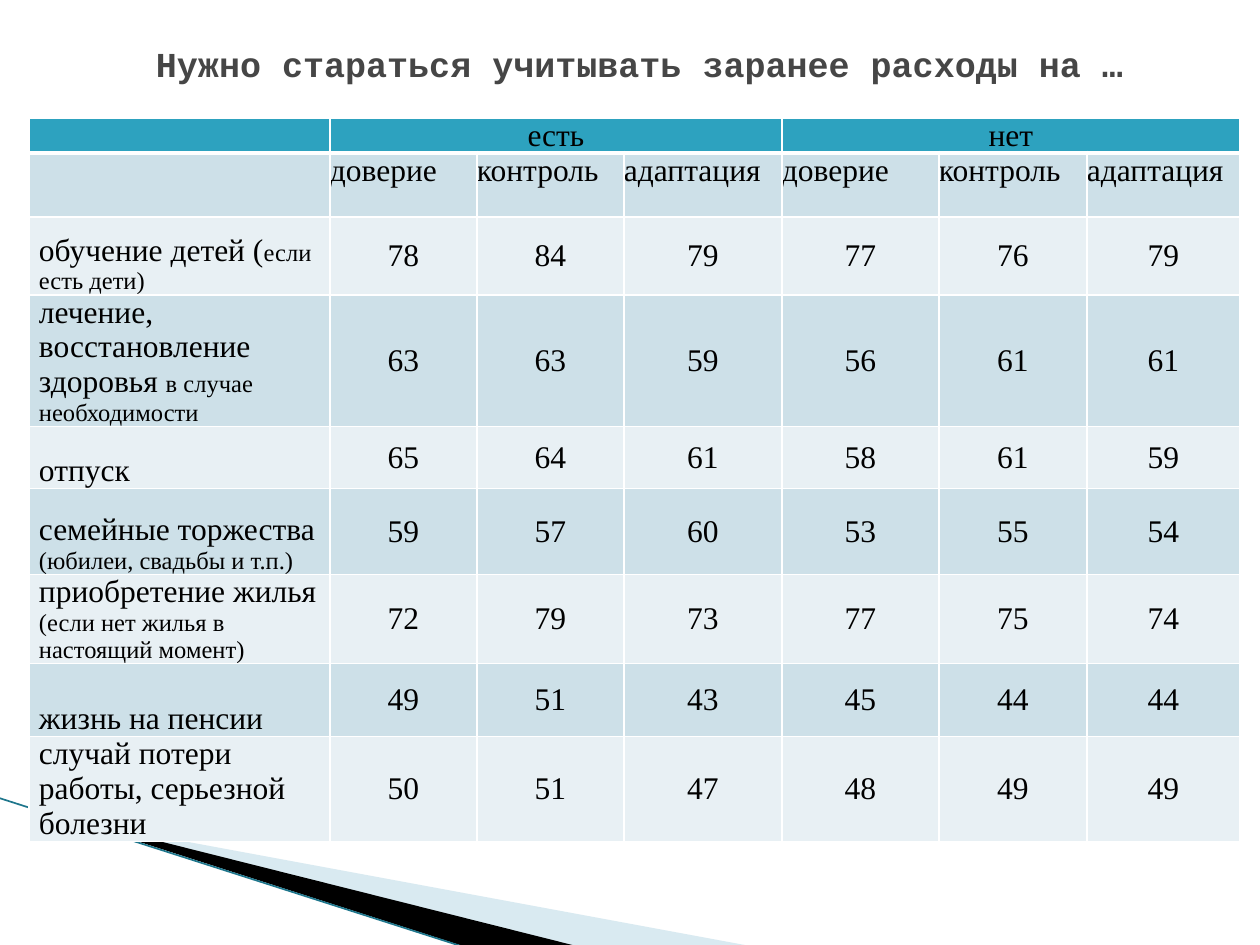
from lxml.etree import SubElement
from pptx import Presentation
from pptx.dml.color import RGBColor as Rgb
from pptx.enum.shapes import MSO_CONNECTOR as Connector
from pptx.enum.text import MSO_ANCHOR as Anchor, PP_ALIGN as Align
from pptx.oxml.ns import qn
from pptx.util import Pt

PX = 914400 / 126
COLORS = {
    "title": "464646", "text": "000000", "border": "FFFFFF", "header": "2DA2BF",
    "dark_band": "CDE0E8", "light_band": "E8F0F4",
    "pale_wedge": "A0CBDC", "black_wedge": "000000", "edge": "1E768C",
}
SERIF, MONO = "Times New Roman", "Courier New"
COLUMNS = [301, 147, 147, 158, 157, 148, 153]
ROWS = [34, 64, 78, 94, 62, 86, 86, 73, 86]
ANSWERS = ["есть", "нет"]
FACTORS = ["доверие", "контроль", "адаптация"]
EXPENSES = [
    ("обучение детей (", "если есть дети)", [78, 84, 79, 77, 76, 79]),
    ("лечение, восстановление здоровья ", "в случае необходимости",
     [63, 63, 59, 56, 61, 61]),
    ("отпуск", "", [65, 64, 61, 58, 61, 59]),
    ("семейные торжества ", "(юбилеи, свадьбы и т.п.)", [59, 57, 60, 53, 55, 54]),
    ("приобретение жилья ", "(если нет жилья в настоящий момент)",
     [72, 79, 73, 77, 75, 74]),
    ("жизнь на пенсии", "", [49, 51, 43, 45, 44, 44]),
    ("случай потери работы, серьезной болезни", "", [50, 51, 47, 48, 49, 49]),
]


def px(length):
    """Turn px into EMU."""
    return round(length * PX)


def color(name):
    """Look up a named colour."""
    return Rgb.from_string(COLORS[name])


def add_run(paragraph, words, size, font, color_name, bold=False):
    """Append one formatted run."""
    run = paragraph.add_run()
    run.text = words
    run.font.size, run.font.name, run.font.bold = Pt(size), font, bold
    run.font.color.rgb = color(color_name)


def reframe(wedge, left, top, width, height):
    """Give a wedge a new frame while its outline stays in place."""
    shift_x, shift_y = wedge.left - left, wedge.top - top
    outline = wedge._element.spPr.find(".//" + qn("a:path"))
    outline.set("w", str(width))
    outline.set("h", str(height))
    for corner in outline.iter(qn("a:pt")):
        corner.set("x", str(int(corner.get("x")) + shift_x))
        corner.set("y", str(int(corner.get("y")) + shift_y))
    wedge.left, wedge.top, wedge.width, wedge.height = left, top, width, height


def add_wedge(slide, left, top, corners, frame, color_name, opacity=100):
    """Draw a filled wedge; corners and frame are relative to its origin."""
    points = [(px(left + x), px(top + y)) for x, y in corners]
    builder = slide.shapes.build_freeform(*points[0])
    builder.add_line_segments(points[1:], close=True)
    wedge = builder.convert_to_shape()
    x, y, width, height = frame
    reframe(wedge, px(left + x), px(top + y), px(width), px(height))
    wedge.shadow.inherit = False
    wedge.fill.solid()
    wedge.fill.fore_color.rgb = color(color_name)
    wedge.line.fill.background()
    if opacity < 100:
        tint = wedge.fill._xPr.find(".//" + qn("a:srgbClr"))
        SubElement(tint, qn("a:alpha"), val=str(opacity * 1000))


def add_swoosh(slide, left, top):
    """Draw the corner decoration from its upper left point."""
    add_wedge(slide, left, top, [(70, 22), (751, 148), (576, 148), (70, 21)],
              (99, -109, 524, 199), "pale_wedge", 40)
    add_wedge(slide, left, top, [(68, 20), (577, 148), (470, 150), (69, 21)],
              (-7, 0, 524, 116), "black_wedge")
    edge = slide.shapes.add_connector(
        Connector.STRAIGHT, px(left), px(top), px(left + 468), px(top + 150))
    edge.line.color.rgb = color("edge")
    edge.line.width = Pt(0.95)
    SubElement(edge._element.spPr, qn("a:effectLst"))


def place_title(slide, left, top, width, height):
    """Put the heading in the title placeholder."""
    title = slide.shapes.title
    title.left, title.top = px(left), px(top)
    title.width, title.height = px(width), px(height)
    frame = title.text_frame
    frame.word_wrap, frame.vertical_anchor = True, Anchor.MIDDLE
    heading = frame.paragraphs[0]
    heading.alignment = Align.CENTER
    add_run(heading, "Нужно стараться учитывать заранее расходы на …",
            20, MONO, "title", True)


def style_cell(cell, band, side_inset=0, bottom_width=1):
    """Set the borders, fill and insets of a cell."""
    properties = cell._tc.get_or_add_tcPr()
    for side, width in zip("LRTB", (1, 1, 1, bottom_width)):
        border = SubElement(properties, qn(f"a:ln{side}"), w=str(Pt(width)))
        paint = SubElement(border, qn("a:solidFill"))
        SubElement(paint, qn("a:srgbClr"), val=COLORS["border"])
    cell.fill.solid()
    cell.fill.fore_color.rgb = color(band)
    cell.margin_left = cell.margin_right = px(side_inset)
    cell.margin_top = cell.margin_bottom = 0


def write_cell(cell, pieces, align, anchor=Anchor.TOP):
    """Write (words, size) pieces into a cell, run by run."""
    cell.vertical_anchor = anchor
    paragraph = cell.text_frame.paragraphs[0]
    paragraph.alignment = align
    for words, size in pieces:
        if words:
            add_run(paragraph, words, size, SERIF, "text")


def fill_headings(table):
    """Fill the answer row and the factor row."""
    for column in range(len(COLUMNS)):
        for row, band, bottom in ((0, "header", 3), (1, "dark_band", 1)):
            cell = table.cell(row, column)
            style_cell(cell, band, bottom_width=bottom)
            SubElement(cell.text_frame.paragraphs[0]._p, qn("a:endParaRPr"), sz="1000")
    for group, answer in enumerate(ANSWERS):
        first = 1 + group * len(FACTORS)
        head = table.cell(0, first)
        head.merge(table.cell(0, first + len(FACTORS) - 1))
        write_cell(head, [(answer, 18)], Align.CENTER)
        for offset, factor in enumerate(FACTORS):
            write_cell(table.cell(1, first + offset), [(factor, 18)], Align.JUSTIFY)


def fill_expenses(table):
    """Fill the banded rows of expenses and their scores."""
    for row, (expense, remark, scores) in enumerate(EXPENSES, 2):
        band = "dark_band" if row % 2 else "light_band"
        for column in range(len(COLUMNS)):
            style_cell(table.cell(row, column), band, side_inset=10)
        write_cell(table.cell(row, 0), [(expense, 18), (remark, 14)],
                   Align.LEFT, Anchor.BOTTOM)
        for column, score in enumerate(scores, 1):
            write_cell(table.cell(row, column), [(str(score), 18)],
                       Align.CENTER, Anchor.MIDDLE)


def add_expense_table(slide, left, top):
    """Build the table of expenses at the given corner."""
    table = slide.shapes.add_table(
        len(ROWS), len(COLUMNS), px(left), px(top),
        px(sum(COLUMNS)), px(sum(ROWS))).table
    for column, width in zip(table.columns, COLUMNS):
        column.width = px(width)
    for row, height in zip(table.rows, ROWS):
        row.height = px(height)
    fill_headings(table)
    fill_expenses(table)


def main():
    """Build and save the slide."""
    deck = Presentation()
    deck.slide_width, deck.slide_height = px(1260), px(945)
    slide = deck.slides.add_slide(deck.slide_layouts[5])
    add_swoosh(slide, -1, 798)
    place_title(slide, 49, 20, 1182, 88)
    add_expense_table(slide, 29, 118)
    deck.save("out.pptx")


if __name__ == "__main__":
    main()
